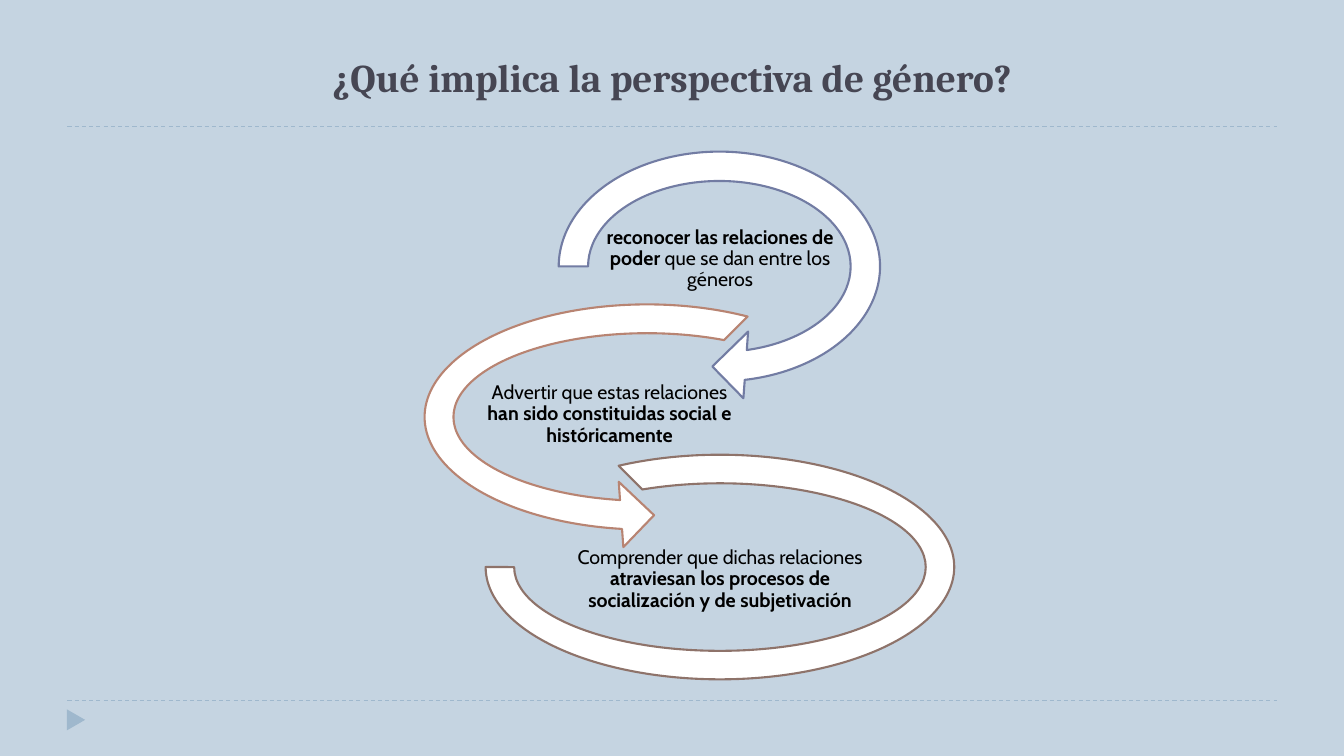
"""Builds the slide on what the gender perspective implies, with three linked arrows."""
from lxml.etree import SubElement
from pptx import Presentation
from pptx.dml.color import RGBColor
from pptx.enum.dml import MSO_LINE
from pptx.enum.shapes import MSO_CONNECTOR, MSO_SHAPE
from pptx.enum.text import MSO_ANCHOR, PP_ALIGN
from pptx.oxml.ns import qn
from pptx.util import Cm, Pt

COLORS = {
    "background": "C5D4E1",
    "rule": "9FB8CD",
    "title": "464653",
    "text": "000000",
    "arrow": "FFFFFF",
    "recognize": "727CA3",
    "notice": "B88472",
    "understand": "8E736A",
}


def color(key):
    return RGBColor.from_string(COLORS[key])


def add_text(box, runs, font_format, color_key, anchor, inset=None):
    area = slide.shapes.add_textbox(*map(Cm, box)).text_frame
    frame_format = {"word_wrap": True, "vertical_anchor": anchor}
    if inset is not None:
        for side in ("left", "top", "right", "bottom"):
            frame_format[f"margin_{side}"] = inset
    for attribute, value in frame_format.items():
        setattr(area, attribute, value)
    paragraph = area.paragraphs[0]
    paragraph.alignment = PP_ALIGN.CENTER
    for words, bold in runs:
        run = paragraph.add_run()
        run.text = words
        for attribute, value in {**font_format, "bold": bold}.items():
            setattr(run.font, attribute, value)
        run.font.color.rgb = color(color_key)
    return paragraph


presentation = Presentation()
presentation.slide_width = Cm(33.87)
presentation.slide_height = Cm(19.05)
slide = presentation.slides.add_slide(presentation.slide_layouts[6])
slide.background.fill.solid()
slide.background.fill.fore_color.rgb = color("background")

for height in (17.65, 3.18):
    rule = slide.shapes.add_connector(
        MSO_CONNECTOR.STRAIGHT, Cm(1.7), Cm(height), Cm(32.18), Cm(height))
    rule.line.color.rgb = color("rule")
    rule.line.width = Pt(0.75)
    rule.line.dash_style = MSO_LINE.DASH
    SubElement(rule._element.spPr, qn("a:effectLst"))

page_marker = slide.shapes.add_shape(
    MSO_SHAPE.ISOSCELES_TRIANGLE, Cm(1.65), Cm(17.91), Cm(0.53), Cm(0.46))
page_marker.rotation = 90
page_marker.shadow.inherit = False
page_marker.fill.solid()
page_marker.fill.fore_color.rgb = color("rule")
page_marker.line.fill.background()

add_text((5.51, 0.91, 22.86, 1.75), [("¿Qué implica la perspectiva de género?", True)],
         {"name": "Cambria", "size": Pt(28)}, "title", MSO_ANCHOR.BOTTOM)

steps = [
    ("recognize", MSO_SHAPE.CIRCULAR_ARROW, (13.61, 3.35, 9.04, 6.73),
     (0.11, 11.42, 45, 108, 0.125), (15.14, 5.54, 6.02, 1.98),
     [("reconocer las relaciones de poder", True),
      (" que se dan entre los géneros", False)]),
    ("notice", MSO_SHAPE.LEFT_CIRCULAR_ARROW, (10.24, 7.21, 12.14, 6.6),
     (0.11, 11.42, 63, 189, 0.125), (12.14, 9.53, 6.45, 1.83),
     [("Advertir que estas relaciones ", False),
      ("han sido constituidas social e históricamente", True)]),
    ("understand", MSO_SHAPE.BLOCK_ARC, (12.24, 11.46, 11.81, 5.66),
     (135, 108, 0.127), (14.15, 13.69, 8, 1.83),
     [("Comprender que dichas relaciones ", False),
      ("atraviesan los procesos de socialización y de subjetivación", True)]),
]
for step, outline, arrow_box, bends, text_box, runs in steps:
    arrow = slide.shapes.add_shape(outline, *map(Cm, arrow_box))
    for index, bend in enumerate(bends):
        arrow.adjustments[index] = bend
    arrow.shadow.inherit = False
    arrow.fill.solid()
    arrow.fill.fore_color.rgb = color("arrow")
    arrow.line.color.rgb = color(step)
    arrow.line.width = Pt(1.5)
    statement = add_text(text_box, runs, {"name": "Cabin", "size": Pt(14)},
                         "text", MSO_ANCHOR.MIDDLE, Cm(0.03))
    statement.line_spacing = 0.9

presentation.save("out.pptx")
